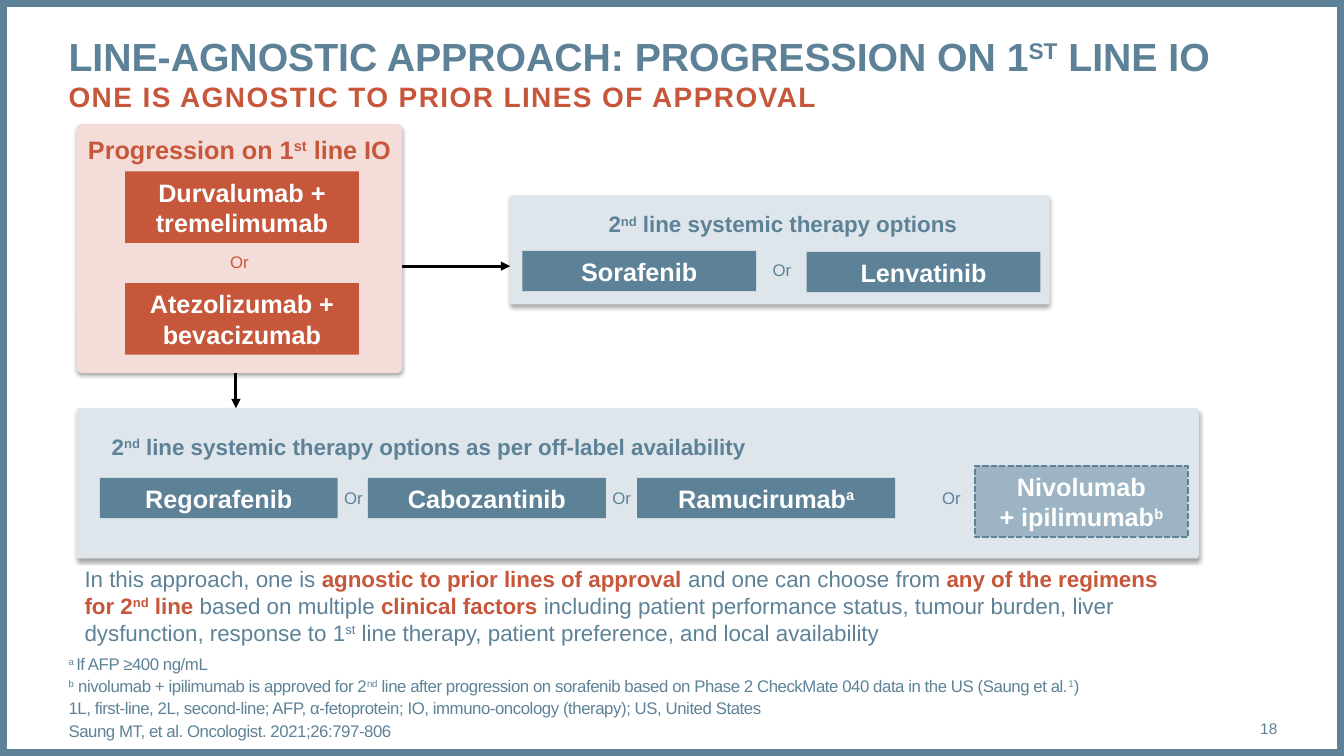
from lxml import etree
from pptx import Presentation
from pptx.dml.color import RGBColor
from pptx.enum import dml, shapes, text
from pptx.oxml import parse_xml
from pptx.oxml.ns import nsdecls, qn
from pptx.util import Inches, Pt

BLUE, ORANGE, WHITE, BLACK = "5D8298", "C6573B", "FFFFFF", "000000"
PALE_BLUE, PALE_ORANGE, MID_BLUE = "DEE6EB", "F4DDD8", "9CB4C3"
LEFT, CENTER, RIGHT = text.PP_ALIGN.LEFT, text.PP_ALIGN.CENTER, text.PP_ALIGN.RIGHT
TOP, MIDDLE, BOTTOM = (text.MSO_ANCHOR.TOP, text.MSO_ANCHOR.MIDDLE,
                       text.MSO_ANCHOR.BOTTOM)


def rgb(color):
    return RGBColor.from_string(color)


def add_runs(paragraph, marked, size, color, bold=False, spacing=0):
    """Add marked text: ^...^ is superscript, *...* is bold orange."""
    for i, part in enumerate(marked.split("*")):
        emphasized = i % 2 == 1
        for j, piece in enumerate(part.split("^")):
            if not piece:
                continue
            run = paragraph.add_run()
            run.text = piece
            run.font.name = "Arial"
            run.font.size = Pt(size)
            run.font.bold = bold or emphasized
            run.font.color.rgb = rgb(ORANGE if emphasized else color)
            properties = run._r.get_or_add_rPr()
            if j % 2 == 1:
                properties.set("baseline", "30000")
            if spacing:
                properties.set("spc", str(round(spacing * 100)))


def set_frame(frame, anchor, margins=(0.1, 0.05), wrap=True):
    frame.word_wrap = wrap
    frame.vertical_anchor = anchor
    frame.margin_left = frame.margin_right = Inches(margins[0])
    frame.margin_top = frame.margin_bottom = Inches(margins[1])


def fill_frame(frame, marked, size, color, bold=False, align=LEFT, spacing=0):
    """Write one paragraph for each line of the marked text."""
    for index, line in enumerate(marked.split("\n")):
        paragraph = frame.add_paragraph() if index else frame.paragraphs[0]
        paragraph.alignment = align
        add_runs(paragraph, line, size, color, bold, spacing)


def add_label(slide, box, marked, size, color=BLUE, bold=False, align=LEFT,
              anchor=TOP, margins=(0.1, 0.05), wrap=True, spacing=0):
    label = slide.shapes.add_textbox(*map(Inches, box))
    set_frame(label.text_frame, anchor, margins, wrap)
    fill_frame(label.text_frame, marked, size, color, bold, align, spacing)
    return label


def add_frame(slide, width, height):
    frame = slide.shapes.add_shape(shapes.MSO_SHAPE.RECTANGLE, 0, 0, width, height)
    frame.shadow.inherit = False
    frame.fill.background()
    frame.line.color.rgb = rgb(BLUE)
    frame.line.width = Pt(10)


def add_panel(slide, box, color):
    panel = slide.shapes.add_shape(shapes.MSO_SHAPE.ROUNDED_RECTANGLE,
                                   *map(Inches, box))
    panel.adjustments[0] = 0.02
    panel.fill.solid()
    panel.fill.fore_color.rgb = rgb(color)
    panel.line.fill.background()
    panel.shadow.inherit = False
    effects = panel._element.spPr.find(qn("a:effectLst"))
    effects.append(parse_xml(
        f'<a:outerShdw {nsdecls("a")} blurRad="{Pt(3.1)}" dist="{Pt(1.8)}" '
        'dir="5400000" algn="t" rotWithShape="0"><a:srgbClr val="000000">'
        '<a:alpha val="35000"/></a:srgbClr></a:outerShdw>'))


def add_drug(slide, box, marked, color, dashed=False):
    drug = slide.shapes.add_shape(shapes.MSO_SHAPE.RECTANGLE, *map(Inches, box))
    drug.shadow.inherit = False
    drug.fill.solid()
    drug.fill.fore_color.rgb = rgb(color)
    if dashed:
        drug.line.color.rgb = rgb(BLUE)
        drug.line.width = Pt(1.5)
        drug.line.dash_style = dml.MSO_LINE.SQUARE_DOT
    else:
        drug.line.fill.background()
    set_frame(drug.text_frame, MIDDLE)
    fill_frame(drug.text_frame, marked, 18, WHITE, True, CENTER)


def add_arrow(slide, *ends):
    arrow = slide.shapes.add_connector(shapes.MSO_CONNECTOR.STRAIGHT,
                                       *map(Inches, ends))
    arrow.line.color.rgb = rgb(BLACK)
    arrow.line.width = Pt(2.25)
    etree.SubElement(arrow.line._get_or_add_ln(), qn("a:tailEnd"), type="triangle")
    etree.SubElement(arrow._element.spPr, qn("a:effectLst"))


def add_title(slide):
    title = add_label(slide, (0.68, 0.32, 11.99, 0.9),
                      "LINE-AGNOSTIC APPROACH: PROGRESSION ON 1^ST^ LINE IO",
                      28, bold=True, margins=(0, 0))
    add_runs(title.text_frame.add_paragraph(),
             "ONE IS AGNOSTIC TO PRIOR LINES OF APPROVAL", 20, ORANGE, True, 1)


def add_footnotes(slide):
    notes = add_label(
        slide, (0.68, 6.45, 11.89, 0.9),
        "^a ^If AFP ≥400 ng/mL\n"
        "^b^ nivolumab + ipilimumab is approved for 2^nd^ line after progression on "
        "sorafenib based on Phase 2 CheckMate 040 data in the US (Saung et al.^1^)\n"
        "1L, first-line, 2L, second-line; AFP, α-fetoprotein; IO, immuno-oncology "
        "(therapy); US, United States\n"
        "Saung MT, et al. Oncologist. 2021;26:797-806",
        12, anchor=BOTTOM, margins=(0, 0), spacing=-0.3)
    for index, paragraph in enumerate(notes.text_frame.paragraphs):
        paragraph.line_spacing = 0.9
        if index:
            paragraph.space_before = Pt(3)


def main():
    presentation = Presentation()
    presentation.slide_width = Inches(13.33)
    presentation.slide_height = Inches(7.5)
    slide = presentation.slides.add_slide(presentation.slide_layouts[6])

    add_frame(slide, presentation.slide_width, presentation.slide_height)
    add_title(slide)

    add_arrow(slide, 2.34, 3.59, 2.34, 4.05)
    add_panel(slide, (0.76, 4.05, 11.13, 1.49), PALE_BLUE)
    add_panel(slide, (5.06, 1.94, 5.35, 1.08), PALE_BLUE)
    add_arrow(slide, 3.99, 2.64, 5.06, 2.64)
    add_panel(slide, (0.76, 1.23, 3.23, 2.47), PALE_ORANGE)

    add_label(slide, (0.76, 1.28, 3.23, 0.4), "Progression on 1^st^ line IO",
              18, ORANGE, True, CENTER)
    add_label(slide, (5.88, 2.04, 3.77, 0.37),
              "2^nd^ line systemic therapy options", 16, BLUE, True, CENTER)
    add_label(slide, (1.01, 4.25, 6.6, 0.37),
              "2^nd^ line systemic therapy options as per off-label availability",
              16, BLUE, True, wrap=False)

    for box, name, color in (
            ((1.24, 1.7, 2.32, 0.71), "Durvalumab + tremelimumab", ORANGE),
            ((1.24, 2.81, 2.32, 0.71), "Atezolizumab + bevacizumab", ORANGE),
            ((5.18, 2.49, 2.32, 0.4), "Sorafenib", BLUE),
            ((8, 2.5, 2.32, 0.4), "Lenvatinib", BLUE),
            ((0.99, 4.74, 2.36, 0.4), "Regorafenib", BLUE),
            ((3.65, 4.74, 2.36, 0.4), "Cabozantinib", BLUE),
            ((6.32, 4.74, 2.56, 0.4), "Ramucirumab^a^", BLUE)):
        add_drug(slide, box, name, color)
    add_drug(slide, (9.67, 4.62, 2.11, 0.71), "Nivolumab\n+ ipilimumab^b^",
             MID_BLUE, dashed=True)

    for left, top, color in ((1.83, 2.45, ORANGE), (7.21, 2.53, BLUE),
                             (2.96, 4.79, BLUE), (5.62, 4.79, BLUE),
                             (8.89, 4.79, BLUE)):
        add_label(slide, (left, top, 1.09, 0.3), "Or", 12, color, align=CENTER)

    add_label(slide, (0.74, 5.56, 10.86, 0.91),
              "In this approach, one is *agnostic to prior lines of approval *and one "
              "can choose from *any of the regimens for 2^nd^ line *based on multiple "
              "*clinical factors *including patient performance status, tumour burden, "
              "liver dysfunction, response to 1^st^ line therapy, patient preference, "
              "and local availability", 16)
    add_footnotes(slide)
    add_label(slide, (11.81, 7.03, 0.86, 0.4), "18", 11, align=RIGHT,
              anchor=MIDDLE, margins=(0, 0))

    presentation.save("out.pptx")


if __name__ == "__main__":
    main()
